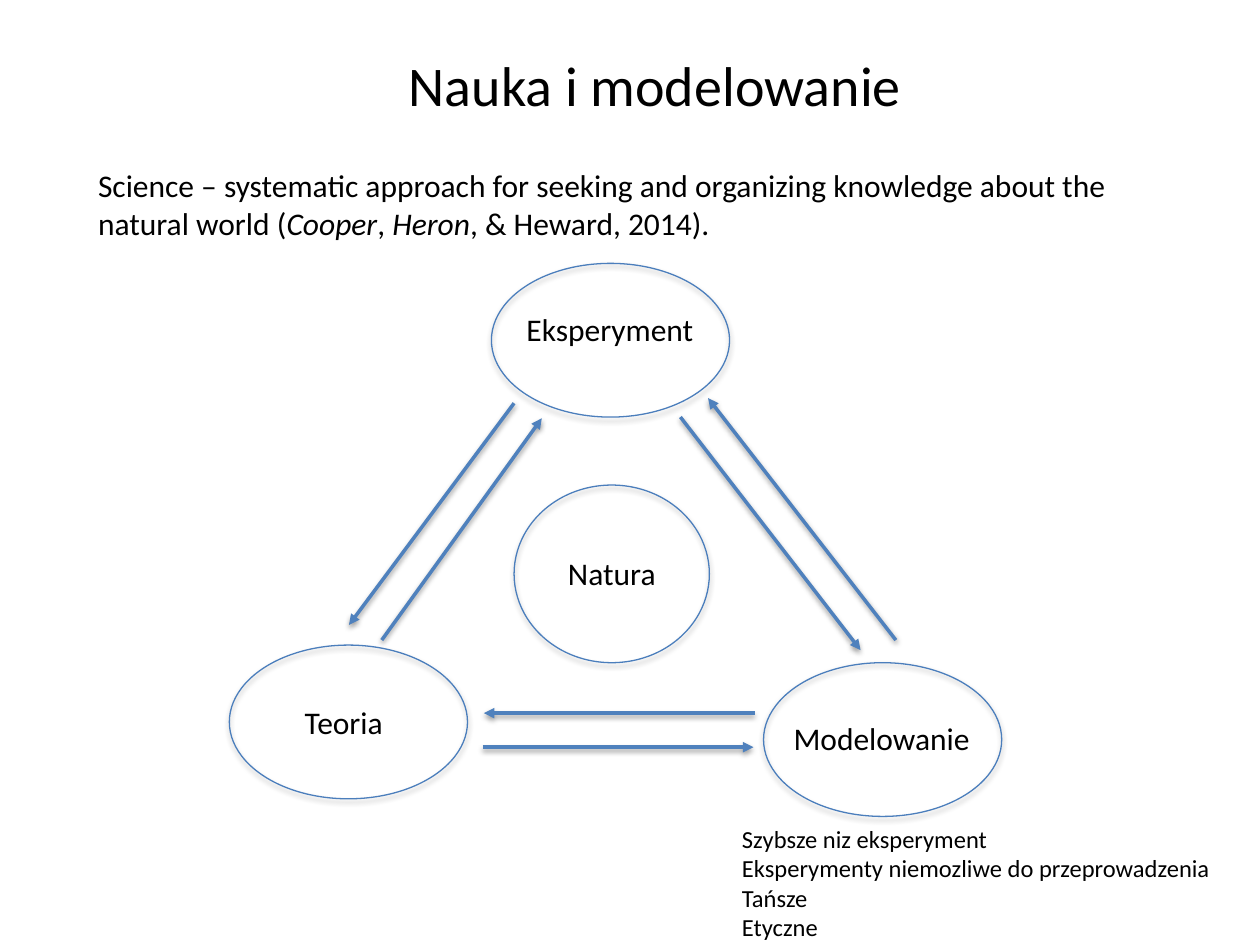
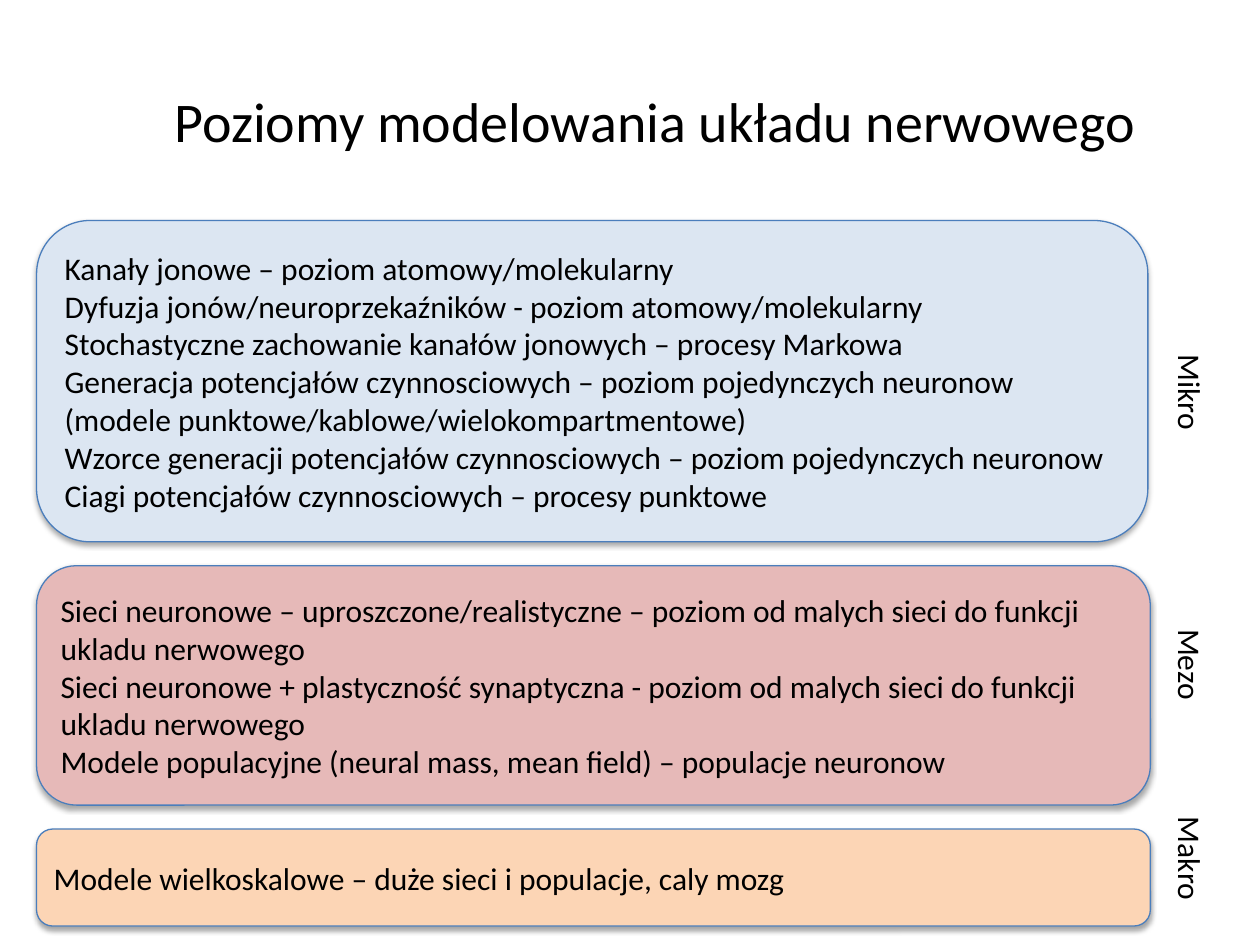
from lxml import etree
from pptx import Presentation
from pptx.dml.color import RGBColor
from pptx.enum.shapes import MSO_CONNECTOR, MSO_SHAPE
from pptx.enum.text import MSO_ANCHOR, PP_ALIGN
from pptx.oxml.ns import qn
from pptx.util import Inches, Pt

ELLIPSE = MSO_SHAPE.OVAL
ROUNDED = MSO_SHAPE.ROUNDED_RECTANGLE
STRAIGHT = MSO_CONNECTOR.STRAIGHT
LEFT, CENTER = PP_ALIGN.LEFT, PP_ALIGN.CENTER
TOP, MIDDLE = MSO_ANCHOR.TOP, MSO_ANCHOR.MIDDLE

FONT = "Calibri"
BLACK = RGBColor(0x00, 0x00, 0x00)
OUTLINE = RGBColor(0x4B, 0x7E, 0xBC)
ARROW = RGBColor(0x4F, 0x81, 0xBD)
MICRO_FILL = RGBColor(0xDC, 0xE6, 0xF2)
MESO_FILL = RGBColor(0xE6, 0xB9, 0xB8)
MACRO_FILL = RGBColor(0xFC, 0xD5, 0xB5)

NODE_SIZE = (1.89, 1.22)
PANEL_LEFT = 0.29
LEVEL_CENTER = 9.45
LABEL_HEIGHT = 0.4

DEFINITION = [
    ("Science – systematic approach for seeking and organizing knowledge "
     "about the natural world (", False),
    ("Cooper", True), (", ", False), ("Heron", True),
    (", & Heward, 2014).", False),
]
# Name, left and top of the ellipse, then left, top and width of its label
NODES = [
    ("Modelowanie", (6.06, 5.26), NODE_SIZE, (6.2, 5.66, 1.67)),
    ("Teoria", (1.82, 5.12), NODE_SIZE, (2.32, 5.53, 0.89)),
    ("Eksperyment", (3.9, 2.09), NODE_SIZE, (4.08, 2.41, 1.54)),
    ("Natura", (4.08, 3.85), (1.55, 1.41), (4.41, 4.35, 0.96)),
]
ARROWS = [
    ((4.08, 3.2), (2.77, 4.96)),
    ((3.03, 5.08), (4.3, 3.32)),
    ((5.99, 5.66), (3.84, 5.66)),
    ((3.83, 5.93), (5.98, 5.93)),
    ((7.11, 5.08), (5.62, 3.16)),
    ((5.4, 3.31), (6.83, 5.16)),
]
ADVANTAGES = [
    "Szybsze niz eksperyment",
    "Eksperymenty niemozliwe do przeprowadzenia",
    "Tańsze",
    "Etyczne",
]
# Top, width, height and fill of the panel, then its lines
PANELS = [
    (1.75, 8.82, 2.55, MICRO_FILL, [
        "Kanały jonowe – poziom atomowy/molekularny",
        "Dyfuzja jonów/neuroprzekaźników - poziom atomowy/molekularny",
        "Stochastyczne zachowanie kanałów jonowych – procesy Markowa",
        "Generacja potencjałów czynnosciowych – poziom pojedynczych neuronow "
        "(modele punktowe/kablowe/wielokompartmentowe)",
        "Wzorce generacji potencjałów czynnosciowych – poziom pojedynczych neuronow",
        "Ciagi potencjałów czynnosciowych – procesy punktowe",
    ]),
    (4.49, 8.84, 1.9, MESO_FILL, [
        "Sieci neuronowe – uproszczone/realistyczne – poziom od malych sieci "
        "do funkcji ukladu nerwowego",
        "Sieci neuronowe + plastyczność synaptyczna - poziom od malych sieci "
        "do funkcji ukladu nerwowego",
        "Modele populacyjne (neural mass, mean field) – populacje neuronow",
    ]),
    (6.58, 8.84, 0.77, MACRO_FILL, [
        "Modele wielkoskalowe – duże sieci i populacje, caly mozg",
    ]),
]
# Name, top and width before rotation
LEVELS = [("Mikro", 2.92, 0.81), ("Mezo", 5.08, 0.77), ("Makro", 6.62, 0.87)]


def add_shadow(shape, distance, opacity):
    """Give the shape a soft shadow straight below it; call after its line is set."""
    effects = etree.SubElement(shape._element.spPr, qn("a:effectLst"))
    shadow = etree.SubElement(effects, qn("a:outerShdw"), blurRad=str(Pt(3.1)),
                              dist=str(Pt(distance)), dir="5400000", rotWithShape="0")
    color = etree.SubElement(shadow, qn("a:srgbClr"), val=str(BLACK))
    etree.SubElement(color, qn("a:alpha"), val=str(opacity * 1000))


def write_text(shape, lines, size=18, align=LEFT, anchor=TOP, wrap=True):
    """Write one paragraph per line; a line is a string or (text, italic) pairs."""
    frame = shape.text_frame
    frame.word_wrap = wrap
    frame.vertical_anchor = anchor
    for index, line in enumerate(lines):
        paragraph = frame.add_paragraph() if index else frame.paragraphs[0]
        paragraph.alignment = align
        for text, italic in [(line, False)] if isinstance(line, str) else line:
            run = paragraph.add_run()
            run.text = text
            run.font.color.rgb = BLACK
            formats = {"name": FONT, "size": Pt(size), "italic": italic}
            for name, value in formats.items():
                setattr(run.font, name, value)


def add_text(slide, box, lines, **style):
    shape = slide.shapes.add_textbox(*map(Inches, box))
    write_text(shape, lines, **style)
    return shape


def add_title(slide, text, top, height):
    add_text(slide, (0.95, top, 8.5, height), [text],
             size=32, align=CENTER, anchor=MIDDLE)


def add_outlined(slide, kind, box, fill=None):
    shape = slide.shapes.add_shape(kind, *map(Inches, box))
    if fill is None:
        shape.fill.background()
    else:
        shape.fill.solid()
        shape.fill.fore_color.rgb = fill
    shape.line.color.rgb = OUTLINE
    shape.line.width = Pt(0.75)
    add_shadow(shape, 1.8, 35)
    return shape


def add_arrow(slide, start, end):
    arrow = slide.shapes.add_connector(STRAIGHT, *map(Inches, start + end))
    arrow.line.color.rgb = ARROW
    arrow.line.width = Pt(2)
    etree.SubElement(arrow.line._get_or_add_ln(), qn("a:tailEnd"), type="triangle")
    add_shadow(arrow, 1.6, 38)


def build_science_slide(slide):
    add_title(slide, "Nauka i modelowanie", 0.34, 0.66)
    add_text(slide, (0.68, 1.27, 8.63, 0.71), [DEFINITION])
    for name, position, size, (left, top, width) in NODES:
        add_outlined(slide, ELLIPSE, position + size)
        add_text(slide, (left, top, width, LABEL_HEIGHT), [name], wrap=False)
    for start, end in ARROWS:
        add_arrow(slide, start, end)
    add_text(slide, (5.79, 6.49, 3.95, 1.04), ADVANTAGES, size=14, wrap=False)


def build_levels_slide(slide):
    add_title(slide, "Poziomy modelowania układu nerwowego", 0.15, 1.61)
    for top, width, height, fill, lines in PANELS:
        panel = add_outlined(slide, ROUNDED, (PANEL_LEFT, top, width, height), fill)
        write_text(panel, lines, anchor=MIDDLE)
    for name, top, width in LEVELS:
        box = (LEVEL_CENTER - width / 2, top, width, LABEL_HEIGHT)
        add_text(slide, box, [name], wrap=False).rotation = 90


def main():
    presentation = Presentation()
    presentation.slide_width = Inches(10)
    presentation.slide_height = Inches(7.5)
    blank = presentation.slide_layouts[6]
    for build in (build_science_slide, build_levels_slide):
        build(presentation.slides.add_slide(blank))
    presentation.save("out.pptx")


if __name__ == "__main__":
    main()
